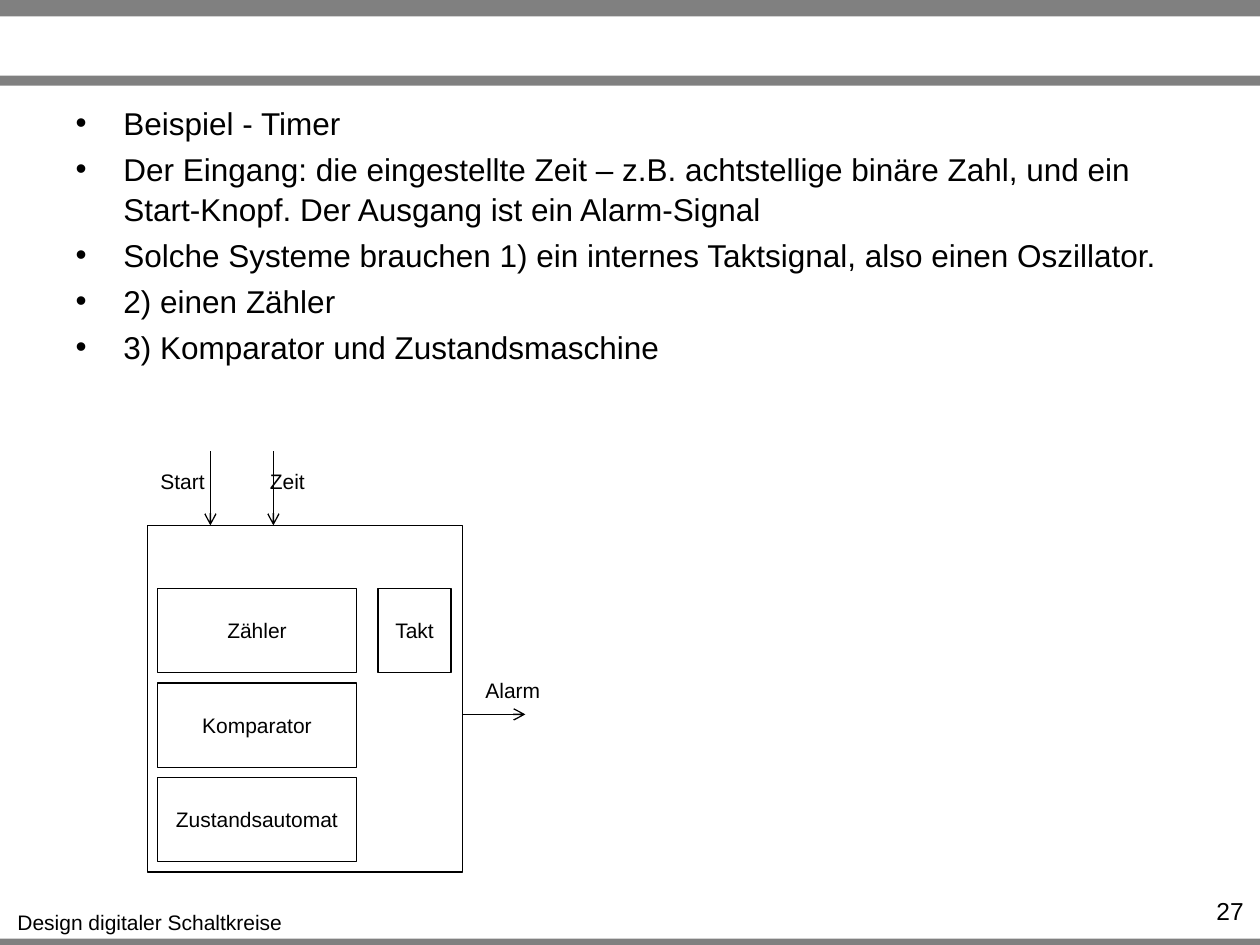
from pptx import Presentation
from pptx.dml.color import RGBColor
from pptx.enum.shapes import MSO_CONNECTOR, MSO_SHAPE
from pptx.enum.text import MSO_ANCHOR, MSO_AUTO_SIZE, PP_ALIGN
from pptx.oxml.ns import qn
from pptx.util import Inches, Pt
from lxml.etree import SubElement

BLACK = RGBColor(0x00, 0x00, 0x00)
GRAY = RGBColor(0x80, 0x80, 0x80)
FONT = "Arial"

POINTS = [
    "Beispiel - Timer",
    "Der Eingang: die eingestellte Zeit – z.B. achtstellige binäre Zahl, und ein "
    "Start-Knopf. Der Ausgang ist ein Alarm-Signal",
    "Solche Systeme brauchen 1) ein internes Taktsignal, also einen Oszillator.",
    "2) einen Zähler",
    "3) Komparator und Zustandsmaschine",
]


def write(paragraph, text, size=12, align=PP_ALIGN.CENTER, color=BLACK):
    paragraph.text = text
    paragraph.alignment = align
    paragraph.font.name = FONT
    paragraph.font.size = Pt(size)
    paragraph.font.color.rgb = color


def add_label(slide, text, left, top, width, height=0.3, wrap=False, **text_format):
    label = slide.shapes.add_textbox(*map(Inches, (left, top, width, height)))
    label.text_frame.word_wrap = wrap
    write(label.text_frame.paragraphs[0], text, **text_format)


def add_block(slide, left, top, width, height, text="", fill=None):
    """Filled bar without outline, or outlined block without fill."""
    block = slide.shapes.add_shape(
        MSO_SHAPE.RECTANGLE, *map(Inches, (left, top, width, height)))
    block.shadow.inherit = False
    if fill is None:
        block.fill.background()
        block.line.color.rgb = BLACK
        block.line.width = Pt(0.75)
    else:
        block.fill.solid()
        block.fill.fore_color.rgb = fill
        block.line.fill.background()
    if text:
        block.text_frame.vertical_anchor = MSO_ANCHOR.MIDDLE
        write(block.text_frame.paragraphs[0], text)


def add_arrow(slide, x1, y1, x2, y2):
    arrow = slide.shapes.add_connector(
        MSO_CONNECTOR.STRAIGHT, *map(Inches, (x1, y1, x2, y2)))
    arrow.line.color.rgb = BLACK
    arrow.line.width = Pt(0.75)
    SubElement(arrow.line._get_or_add_ln(), qn("a:tailEnd"), type="arrow")
    SubElement(arrow._element.spPr, qn("a:effectLst"))


def add_frame(slide, width, height):
    # Gray bars across the slide
    for top, bar_height in ((0, 0.13), (0.6, 0.08), (height - 0.05, 0.08)):
        add_block(slide, 0, top, width, bar_height, fill=GRAY)
    # Footer and page number
    add_label(slide, "Design digitaler Schaltkreise", 0.03, height - 0.33, 2.32)
    add_label(slide, "27", width - 0.9, height - 0.44, 0.87, 0.24,
              wrap=True, size=14, align=PP_ALIGN.RIGHT)


def fill_points(body, left, top, width, height):
    body.left, body.top, body.width, body.height = map(
        Inches, (left, top, width, height))
    frame = body.text_frame
    frame.word_wrap = True
    frame.auto_size = MSO_AUTO_SIZE.NONE
    for index, text in enumerate(POINTS):
        paragraph = frame.paragraphs[0] if index == 0 else frame.add_paragraph()
        properties = paragraph._p.get_or_add_pPr()
        properties.set("marL", str(Inches(0.38)))
        properties.set("indent", str(-Inches(0.38)))
        SubElement(properties, qn("a:buFont"), typeface=FONT)
        SubElement(properties, qn("a:buChar"), char="•")
        write(paragraph, text, size=18, align=PP_ALIGN.LEFT)
        paragraph.line_spacing = 1.05
        paragraph.space_before = Pt(3.6 if index else 0)


def add_timer(slide, left, top, width, height):
    # Housing
    add_block(slide, left, top, width, height)

    # Inner blocks
    row_top, row_height, pitch = top + 0.5, 0.67, 0.75
    for row, text in enumerate(("Zähler", "Komparator", "Zustandsautomat")):
        add_block(slide, left + 0.08, row_top + row * pitch, 1.58, row_height, text)
    add_block(slide, left + 1.83, row_top, 0.58, row_height, "Takt")

    # Inputs
    for x in (left + 0.5, left + 1):
        add_arrow(slide, x, top - 0.59, x, top)
    add_label(slide, "Start", left, top - 0.5, 0.56)
    add_label(slide, "Zeit", left + 0.87, top - 0.5, 0.48)

    # Output
    right, alarm_y = left + width, top + 1.5
    add_arrow(slide, right, alarm_y, right + 0.5, alarm_y)
    add_label(slide, "Alarm", right + 0.08, alarm_y - 0.34, 0.64)


def main():
    prs = Presentation()
    prs.slide_width, prs.slide_height = Inches(10), Inches(7.5)
    slide = prs.slides.add_slide(prs.slide_layouts[1])

    # The slide has no title
    title = slide.shapes.title._element
    title.getparent().remove(title)

    add_frame(slide, 10, 7.5)
    fill_points(slide.placeholders[1], 0.5, 0.76, 9, 3.58)
    add_timer(slide, 1.17, 4.17, 2.5, 2.75)
    prs.save("out.pptx")


if __name__ == "__main__":
    main()
